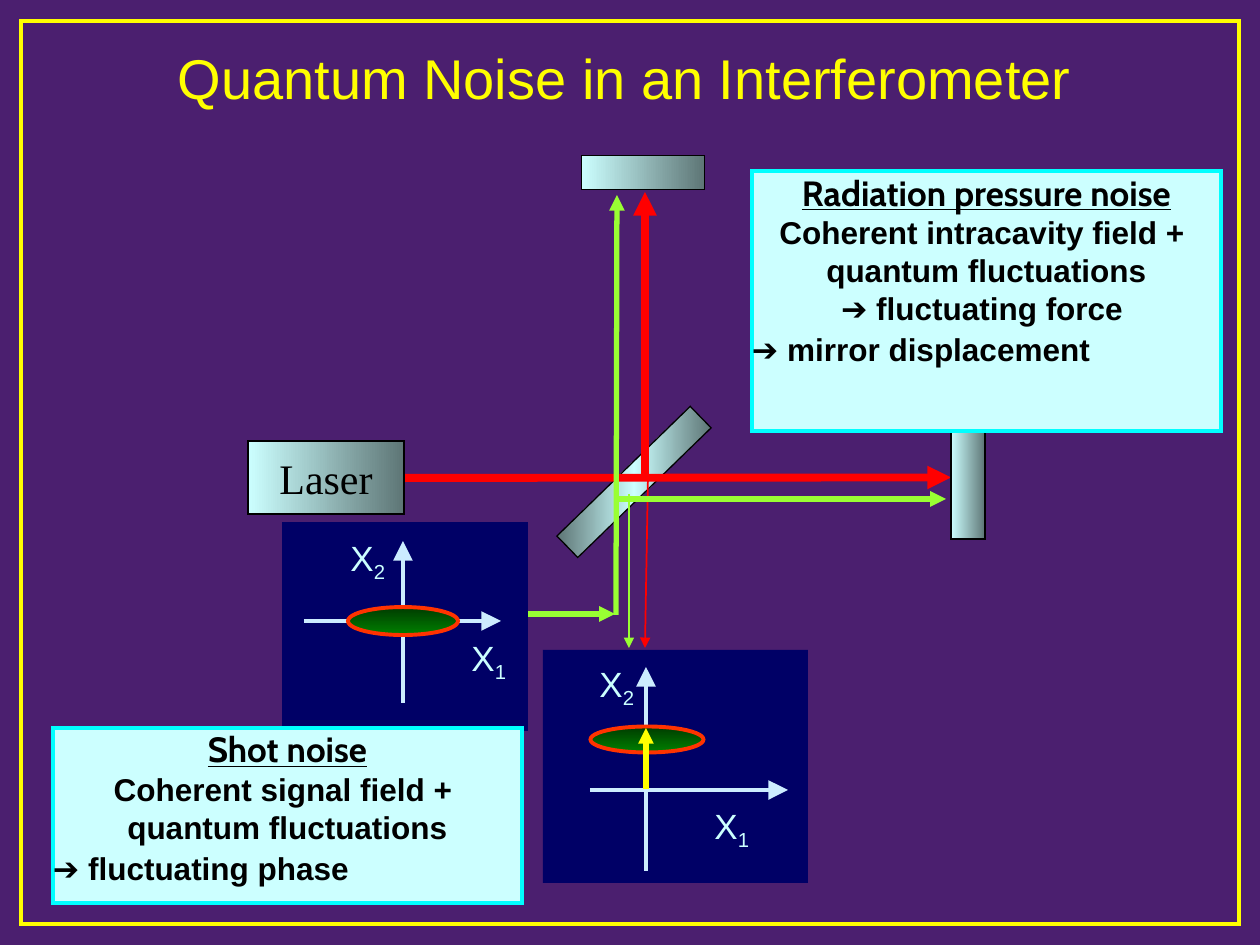
from copy import deepcopy
from dataclasses import dataclass
from typing import Optional

from lxml import etree
from pptx import Presentation
from pptx import util as u
from pptx.dml.color import RGBColor
from pptx.enum import shapes, text
from pptx.oxml import ns

PX = u.Inches(1) / 126

PURPLE = RGBColor(0x4B, 0x1F, 0x6F)
YELLOW = RGBColor(0xFF, 0xFF, 0x00)
RED = RGBColor(0xFF, 0x00, 0x00)
LIME = RGBColor(0x99, 0xFF, 0x33)
NAVY = RGBColor(0x00, 0x00, 0x66)
ICE = RGBColor(0xCC, 0xEC, 0xFF)
PALE = RGBColor(0xCC, 0xFF, 0xFF)
STEEL = RGBColor(0x5E, 0x76, 0x76)
CYAN = RGBColor(0x00, 0xFF, 0xFF)
ORANGE = RGBColor(0xFF, 0x33, 0x00)
GREEN = RGBColor(0x00, 0x80, 0x00)
DARK_GREEN = RGBColor(0x00, 0x3B, 0x00)
BLACK = RGBColor(0x00, 0x00, 0x00)

RECT = shapes.MSO_SHAPE.RECTANGLE
OVAL = shapes.MSO_SHAPE.OVAL
CENTER = text.PP_ALIGN.CENTER
LEFT = text.PP_ALIGN.LEFT


@dataclass
class Box:
    x: int
    y: int
    w: int
    h: int
    fill: tuple = ()
    line: Optional[RGBColor] = None
    width: float = 0.75
    kind: int = RECT
    angle: int = 0
    rotation: float = 0


@dataclass
class Arrow:
    x1: int
    y1: int
    x2: int
    y2: int
    color: RGBColor
    width: float
    head: str = "med"


@dataclass
class Quadrature:
    panel: Box
    axes: tuple
    labels: tuple
    ellipse: Box


@dataclass
class Note:
    box: Box
    heading: str
    lines: tuple
    result: str


def px(*values):
    return [u.Emu(round(v * PX)) for v in values]


def add_text(p, words, size=18, font="Arial", color=BLACK, bold=False,
             underline=False, baseline=0, align=LEFT, spacing=None):
    p.alignment = align
    if spacing:
        p.line_spacing = spacing
    r = p.add_run()
    r.text = words
    r.font.size = u.Pt(size)
    r.font.name = font
    r.font.color.rgb = color
    r.font.bold = bold
    r.font.underline = underline
    if baseline:
        r._r.get_or_add_rPr().set("baseline", str(baseline * 1000))


def add_box(slide, box: Box):
    sp = slide.shapes.add_shape(box.kind, *px(box.x, box.y, box.w, box.h))
    sp.shadow.inherit = False
    sp.rotation = box.rotation
    if not box.fill:
        sp.fill.background()
    elif len(box.fill) == 1:
        sp.fill.solid()
        sp.fill.fore_color.rgb = box.fill[0]
    else:
        sp.fill.gradient()
        sp.fill.gradient_angle = (360 - box.angle) % 360
        gs_list = sp._element.spPr.find(".//" + ns.qn("a:gsLst"))
        for _ in box.fill[2:]:
            gs_list.append(deepcopy(gs_list[-1]))
        for i, (stop, color) in enumerate(zip(sp.fill.gradient_stops, box.fill)):
            stop.position = i / (len(box.fill) - 1)
            stop.color.rgb = color
    if box.line is None:
        sp.line.fill.background()
    else:
        sp.line.color.rgb = box.line
        sp.line.width = u.Pt(box.width)
        etree.SubElement(sp.line._get_or_add_ln(), ns.qn("a:miter"), lim="800000")
    return sp


def add_arrow(slide, arrow: Arrow):
    cn = slide.shapes.add_connector(
        shapes.MSO_CONNECTOR.STRAIGHT, *px(arrow.x1, arrow.y1, arrow.x2, arrow.y2))
    cn.line.color.rgb = arrow.color
    cn.line.width = u.Pt(arrow.width)
    etree.SubElement(cn.line._get_or_add_ln(), ns.qn("a:tailEnd"),
                     type="triangle", w=arrow.head, len=arrow.head)
    etree.SubElement(cn._element.spPr, ns.qn("a:effectLst"))
    return cn


def add_quadrature(slide, quad: Quadrature):
    add_box(slide, quad.panel)
    for axis in quad.axes:
        add_arrow(slide, Arrow(*axis, ICE, 2.25, "lg"))
    for index, x, y in quad.labels:
        tf = slide.shapes.add_textbox(*px(x, y, 59, 60)).text_frame
        tf.word_wrap = True
        tf.margin_right = 0
        add_text(tf.paragraphs[0], "X", size=20, color=PALE)
        add_text(tf.paragraphs[0], index, size=20, color=PALE, baseline=-25)
    add_box(slide, quad.ellipse)


def add_note(slide, note: Note):
    tf = add_box(slide, note.box).text_frame
    tf.word_wrap = True
    tf.vertical_anchor = text.MSO_ANCHOR.TOP
    tf.margin_left = tf.margin_right = tf.margin_top = tf.margin_bottom = 0
    add_text(tf.paragraphs[0], note.heading, size=20, font="Cabin", bold=True,
             underline=True, align=CENTER)
    for line in note.lines:
        add_text(tf.add_paragraph(), line, bold=True, align=CENTER)
    add_text(tf.add_paragraph(), note.result, bold=True, spacing=1.1)


def ellipse(x: int, y: int, w: int, h: int) -> Box:
    return Box(x, y, w, h, (GREEN, DARK_GREEN), ORANGE, 2.25, OVAL, rotation=270)


def note_box(x: int, y: int, h: int) -> Box:
    return Box(x, y, 469, h, (PALE,), CYAN, 2.25)


METAL = (PALE, STEEL)
FRAME = Box(21, 21, 1218, 903, line=YELLOW, width=2.25)
SPLITTER = Box(619, 389, 30, 186, (STEEL, PALE, STEEL), BLACK, angle=314, rotation=45.8)
LASER = Box(248, 441, 156, 73, METAL, BLACK)
END_MIRROR = Box(951, 416, 34, 123, METAL, BLACK)
TOP_MIRROR = Box(626, 111, 34, 123, METAL, BLACK, angle=90, rotation=270)
LASER_BEAM = Arrow(367, 478, 949, 478, RED, 4.5)
BEAMS = (
    Arrow(645, 478, 645, 192, RED, 4.5),
    Arrow(648, 478, 645, 648, RED, 1),
    Arrow(528, 614, 615, 614, LIME, 3),
    Arrow(616, 615, 617, 195, LIME, 3),
    Arrow(616, 499, 946, 499, LIME, 3),
    Arrow(629, 494, 629, 648, LIME, 1.5),
)
INPUT = Quadrature(
    Box(282, 522, 246, 209, (NAVY,)),
    ((403, 703, 403, 541), (304, 621, 501, 621)),
    (("1", 459, 630), ("2", 338, 530)),
    ellipse(389, 566, 28, 110))
OUTPUT = Quadrature(
    Box(543, 650, 265, 233, (NAVY,)),
    ((646, 871, 646, 667), (590, 790, 788, 790)),
    (("1", 702, 798), ("2", 587, 656)),
    ellipse(634, 683, 26, 113))
DISPLACEMENT = Arrow(646, 789, 646, 728, YELLOW, 3)
NOTES = (
    Note(note_box(752, 171, 260), "Radiation pressure noise",
         ("Coherent intracavity field + ", "quantum fluctuations", "➔ fluctuating force "),
         "➔ mirror displacement"),
    Note(note_box(53, 728, 175), "Shot noise",
         ("Coherent signal field + ", "quantum fluctuations"),
         "➔ fluctuating phase"),
)


def main():
    prs = Presentation()
    prs.slide_width, prs.slide_height = px(1260, 945)
    slide = prs.slides.add_slide(prs.slide_layouts[5])
    slide.background.fill.solid()
    slide.background.fill.fore_color.rgb = PURPLE

    title = slide.shapes.title
    title.left, title.top, title.width, title.height = px(165, 16, 1017, 123)
    title.text_frame.auto_size = text.MSO_AUTO_SIZE.NONE
    title.text_frame.vertical_anchor = text.MSO_ANCHOR.MIDDLE
    add_text(title.text_frame.paragraphs[0], "Quantum Noise in an Interferometer",
             size=32, color=YELLOW)

    add_box(slide, FRAME)
    add_box(slide, SPLITTER)
    laser_beam = add_arrow(slide, LASER_BEAM)
    for beam in BEAMS:
        add_arrow(slide, beam)
    tf = add_box(slide, LASER).text_frame
    tf.word_wrap = False
    add_text(tf.paragraphs[0], "Laser", size=24, font="Times New Roman", align=CENTER)
    add_quadrature(slide, INPUT)
    laser_beam.end_connect(add_box(slide, END_MIRROR), 1)
    add_box(slide, TOP_MIRROR)
    add_quadrature(slide, OUTPUT)
    add_arrow(slide, DISPLACEMENT)
    for note in NOTES:
        add_note(slide, note)
    prs.save("out.pptx")


if __name__ == "__main__":
    main()
